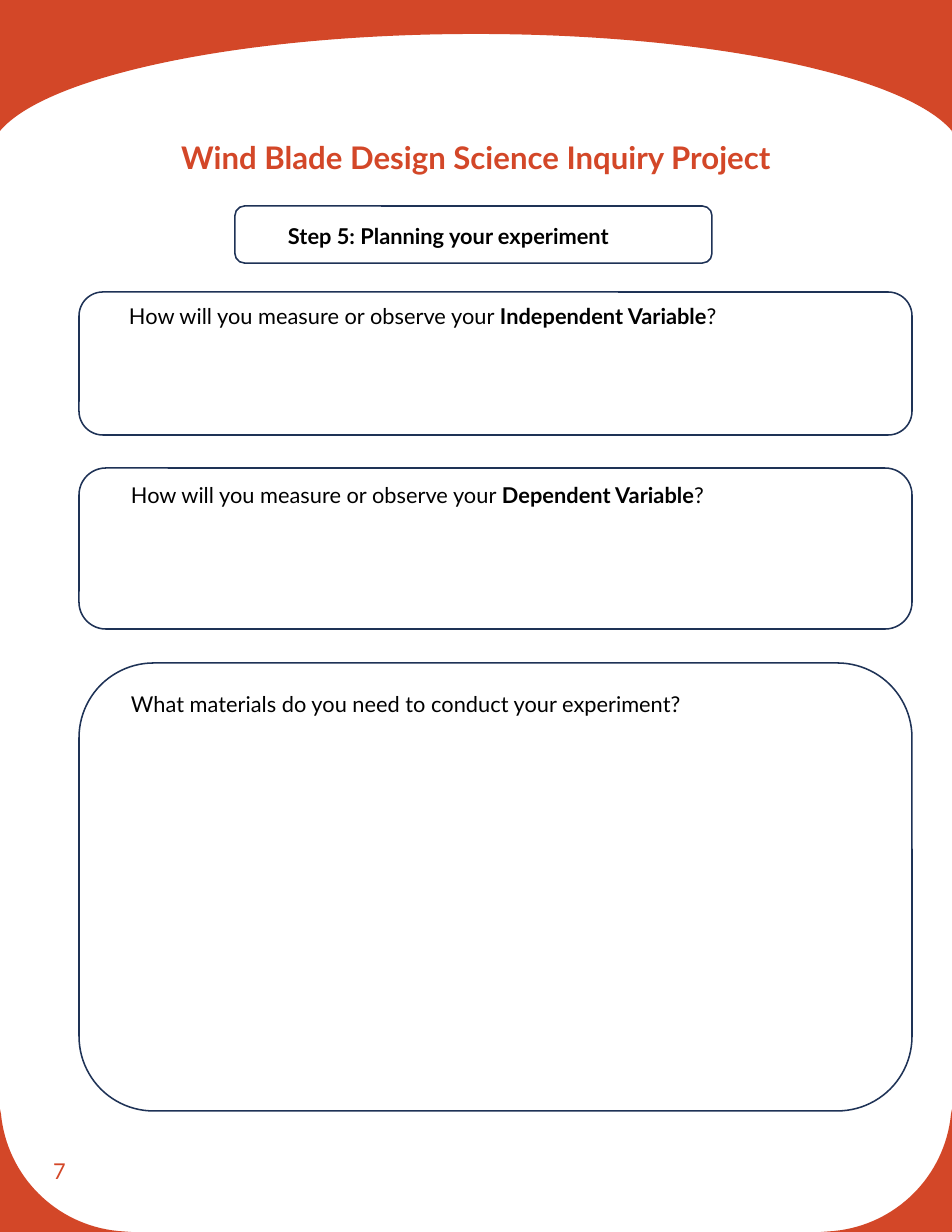
from dataclasses import dataclass

from lxml.etree import SubElement
from pptx import Presentation
from pptx.dml.color import RGBColor
from pptx.enum.shapes import MSO_SHAPE as Shape
from pptx.enum.text import MSO_ANCHOR as Anchor, MSO_AUTO_SIZE as AutoSize, PP_ALIGN as Align
from pptx.oxml.ns import qn
from pptx.util import Pt

WIDTH, HEIGHT = 952, 1232


def px(*lengths):
    """Lengths in px (112 to the inch) as EMU."""
    return [round(length * 914400 / 112) for length in lengths]


def mirror(segments):
    return [[(WIDTH - x, y) for x, y in segment] for segment in segments]


@dataclass(frozen=True)
class Theme:
    font: str = "Lato"
    accent: RGBColor = RGBColor(0xD3, 0x47, 0x28)
    outline: RGBColor = RGBColor(0x1E, 0x32, 0x56)
    ink: RGBColor = RGBColor(0, 0, 0)
    title_size: Pt = Pt(20)
    body_size: Pt = Pt(14)
    line_width: Pt = Pt(1)


class Worksheet:
    def __init__(self, page, theme):
        self.page = page
        self.theme = theme

    def area(self, segments):
        """Accent area; one point is a straight step, three are a cubic curve."""
        start, *steps = segments
        builder = self.page.shapes.build_freeform(*px(*start[0]), scale=1.0)
        builder.add_line_segments([px(*step[-1]) for step in steps], close=True)
        shape = builder.convert_to_shape()
        shape.shadow.inherit = False
        shape.fill.solid()
        shape.fill.fore_color.rgb = self.theme.accent
        shape.line.fill.background()

        # Bend the steps that have control points
        lines = list(shape.element.iter(qn("a:lnTo")))
        for line, step in zip(lines, steps):
            if len(step) == 3:
                line.getparent().replace(line, self.bend(line, step, shape))

    def bend(self, line, step, shape):
        curve = line.makeelement(qn("a:cubicBezTo"))
        for point in step:
            x, y = px(*point)
            SubElement(curve, qn("a:pt"), x=str(x - shape.left), y=str(y - shape.top))
        return curve

    def text(self, place, spans, size, color, shapes=None, align=Align.LEFT,
             anchor=Anchor.TOP, spacing=None, fit=AutoSize.NONE):
        """Text box holding one paragraph of (words, bold) spans."""
        box = (shapes or self.page.shapes).add_textbox(*px(*place))
        frame = box.text_frame
        frame.word_wrap = True
        frame.auto_size = fit
        frame.vertical_anchor = anchor
        para = frame.paragraphs[0]
        para.alignment = align
        if spacing:
            para.line_spacing = spacing
        para.font.name = self.theme.font
        para.font.size = size
        para.font.color.rgb = color
        for words, bold in spans:
            span = para.add_run()
            span.text = words
            span.font.bold = bold

    def panel(self, frame_place, text_place, spans):
        """Rounded outline grouped with its prompt."""
        shapes = self.page.shapes.add_group_shape().shapes
        frame = shapes.add_shape(Shape.ROUNDED_RECTANGLE, *px(*frame_place))
        frame.shadow.inherit = False
        frame.fill.background()
        frame.line.color.rgb = self.theme.outline
        frame.line.width = self.theme.line_width
        self.text(text_place, spans, self.theme.body_size, self.theme.ink, shapes,
                  fit=AutoSize.SHAPE_TO_FIT_TEXT)


def main():
    deck = Presentation()
    deck.slide_width, deck.slide_height = px(WIDTH, HEIGHT)
    theme = Theme()
    sheet = Worksheet(deck.slides.add_slide(deck.slide_layouts[6]), theme)

    # Arched top band
    sheet.area([
        [(0, 0)], [(WIDTH, 0)], [(WIDTH, 132)], [(WIDTH, 131)],
        [(906, 76), (710, 34), (476, 34)],
        [(242, 34), (46, 76), (0, 131)],
        [(0, 132)],
    ])

    # Rounded bottom corners
    corner = [
        [(0, 1109)], [(1, 1114)],
        [(7, 1176), (56, 1225), (118, 1231)],
        [(131, HEIGHT)], [(0, HEIGHT)],
    ]
    sheet.area(corner)
    sheet.area(mirror(corner))

    # Page number and title
    sheet.text((42, 1138, 214, 66), [("7", False)], theme.body_size,
               theme.accent, anchor=Anchor.MIDDLE)
    sheet.text((40, 122, 872, 96), [("Wind Blade Design Science Inquiry Project", True)],
               theme.title_size, theme.accent, align=Align.CENTER, spacing=1.3)

    # Step heading
    sheet.panel((235, 206, 477, 57), (277, 217, 463, 38),
                [("Step 5: Planning your experiment", True)])

    # Answer panels: top, height, prompt left, prompt top, prompt height, prompt
    question = ("How will you measure or observe your ", False)
    panels = [
        (468, 161, 120, 476, 31,
         [question, ("Dependent Variable", True), ("?", False)]),
        (292, 143, 118, 297, 28,
         [question, ("Independent Variable", True), ("?", False)]),
        (663, 448, 120, 685, 87,
         [("What materials do you need to conduct your experiment?", False)]),
    ]
    for top, height, left, text_top, text_height, spans in panels:
        sheet.panel((79, top, 833, height), (left, text_top, 793, text_height), spans)

    deck.save("out.pptx")


if __name__ == "__main__":
    main()
